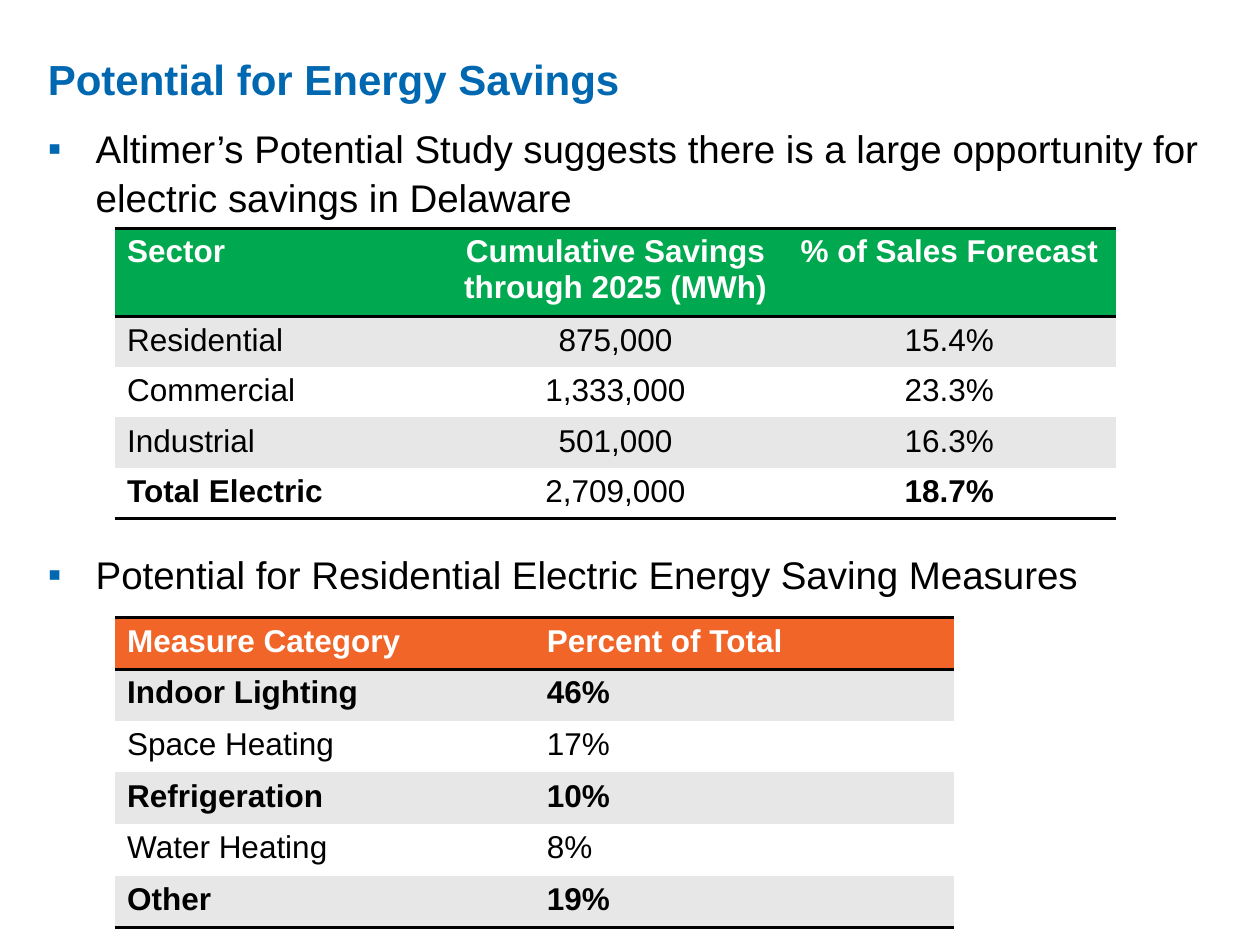
from lxml.etree import SubElement
from pptx import Presentation
from pptx.dml.color import RGBColor
from pptx.enum.text import MSO_ANCHOR, PP_ALIGN
from pptx.oxml.ns import qn
from pptx.util import Inches, Pt

BLUE = RGBColor(0x00, 0x67, 0xB1)
GREEN = RGBColor(0x00, 0xA9, 0x4F)
ORANGE = RGBColor(0xF2, 0x65, 0x29)
GRAY = RGBColor(0xE7, 0xE7, 0xE7)
WHITE = RGBColor(0xFF, 0xFF, 0xFF)
BLACK = RGBColor(0x00, 0x00, 0x00)

FONT = "Arial"
PLAIN_TABLE_STYLE = "{2D5ABB26-0587-4C30-8999-92F81FD0307C}"
LEFT, TABLE_LEFT = 0.38, 0.91
INDENT = 0.38

TITLE = "Potential for Energy Savings"
BULLETS = [  # top, height, text
    (0.97, 0.76, "Altimer’s Potential Study suggests there is a large opportunity for "
                 "electric savings in Delaware"),
    (4.35, 0.4, "Potential for Residential Electric Energy Saving Measures"),
]
TABLES = [
    dict(top=1.81, column_width=2.65, header_height=0.66, row_height=0.38,
         header_color=GREEN, number_align=PP_ALIGN.CENTER,
         bold={"Total Electric", "18.7%"},
         rows=[
             ("Sector", "Cumulative Savings through 2025 (MWh)", "% of Sales Forecast"),
             ("Residential", "875,000", "15.4%"),
             ("Commercial", "1,333,000", "23.3%"),
             ("Industrial", "501,000", "16.3%"),
             ("Total Electric", "2,709,000", "18.7%"),
         ]),
    dict(top=4.9, column_width=3.33, header_height=0.41, row_height=0.41,
         header_color=ORANGE, number_align=PP_ALIGN.LEFT,
         bold={"Indoor Lighting", "46%", "Refrigeration", "10%", "Other", "19%"},
         rows=[
             ("Measure Category", "Percent of Total"),
             ("Indoor Lighting", "46%"),
             ("Space Heating", "17%"),
             ("Refrigeration", "10%"),
             ("Water Heating", "8%"),
             ("Other", "19%"),
         ]),
]


def set_font(paragraph, size, color, bold=False):
    font = paragraph.font
    font.name, font.size, font.bold = FONT, Pt(size), bold
    font.color.rgb = color


def clear_margins(frame):
    frame.margin_left = frame.margin_right = frame.margin_top = frame.margin_bottom = 0
    frame.word_wrap = True


def add_title(page):
    title = page.shapes.title
    title.left, title.top = Inches(LEFT), 0
    title.width, title.height = Inches(9), Inches(1.25)
    frame = title.text_frame
    clear_margins(frame)
    frame.vertical_anchor = MSO_ANCHOR.MIDDLE
    frame.text = TITLE
    paragraph = frame.paragraphs[0]
    paragraph.alignment = PP_ALIGN.LEFT
    set_font(paragraph, 24, BLUE, bold=True)


def add_bullet(page, top, height, text):
    box = page.shapes.add_textbox(Inches(LEFT), Inches(top), Inches(9.27), Inches(height))
    clear_margins(box.text_frame)
    paragraph = box.text_frame.paragraphs[0]
    paragraph.text = text
    paragraph.line_spacing = 1.06
    properties = paragraph._p.get_or_add_pPr()
    properties.set("marL", str(Inches(INDENT)))
    properties.set("indent", str(-Inches(INDENT)))
    bullet_color = SubElement(properties, qn("a:buClr"))
    SubElement(bullet_color, qn("a:srgbClr"), val=str(BLUE))
    SubElement(properties, qn("a:buFont"), typeface=FONT)
    SubElement(properties, qn("a:buChar"), char="▪")
    set_font(paragraph, 22, BLACK)


def add_border(cell, side):
    """Draw a black rule on one side of the cell; call before filling it."""
    line = SubElement(cell._tc.get_or_add_tcPr(), qn(f"a:{side}"), w=str(Pt(2)))
    fill = SubElement(line, qn("a:solidFill"))
    SubElement(fill, qn("a:srgbClr"), val=str(BLACK))


def add_data_table(page, top, column_width, header_height, row_height,
                   header_color, number_align, bold, rows):
    last = len(rows) - 1
    columns = len(rows[0])
    frame = page.shapes.add_table(
        len(rows), columns, Inches(TABLE_LEFT), Inches(top),
        Inches(column_width * columns), Inches(header_height + row_height * last))
    table = frame.table
    table._tbl.tblPr.find(qn("a:tableStyleId")).text = PLAIN_TABLE_STYLE
    for column in table.columns:
        column.width = Inches(column_width)
    for r, values in enumerate(rows):
        header = r == 0
        table.rows[r].height = Inches(header_height if header else row_height)
        for c, value in enumerate(values):
            cell = table.cell(r, c)
            if header:
                add_border(cell, "lnT")
            if header or r == last:
                add_border(cell, "lnB")
            cell.fill.solid()
            cell.fill.fore_color.rgb = header_color if header else GRAY if r % 2 else WHITE
            cell.text = value
            paragraph = cell.text_frame.paragraphs[0]
            paragraph.alignment = number_align if c else PP_ALIGN.LEFT
            set_font(paragraph, 18, WHITE if header else BLACK, header or value in bold)


def main():
    deck = Presentation()
    deck.slide_width, deck.slide_height = Inches(10), Inches(7.5)
    page = deck.slides.add_slide(deck.slide_layouts[5])
    add_title(page)
    for bullet in BULLETS:
        add_bullet(page, *bullet)
    for table in TABLES:
        add_data_table(page, **table)
    deck.save("out.pptx")


if __name__ == "__main__":
    main()
